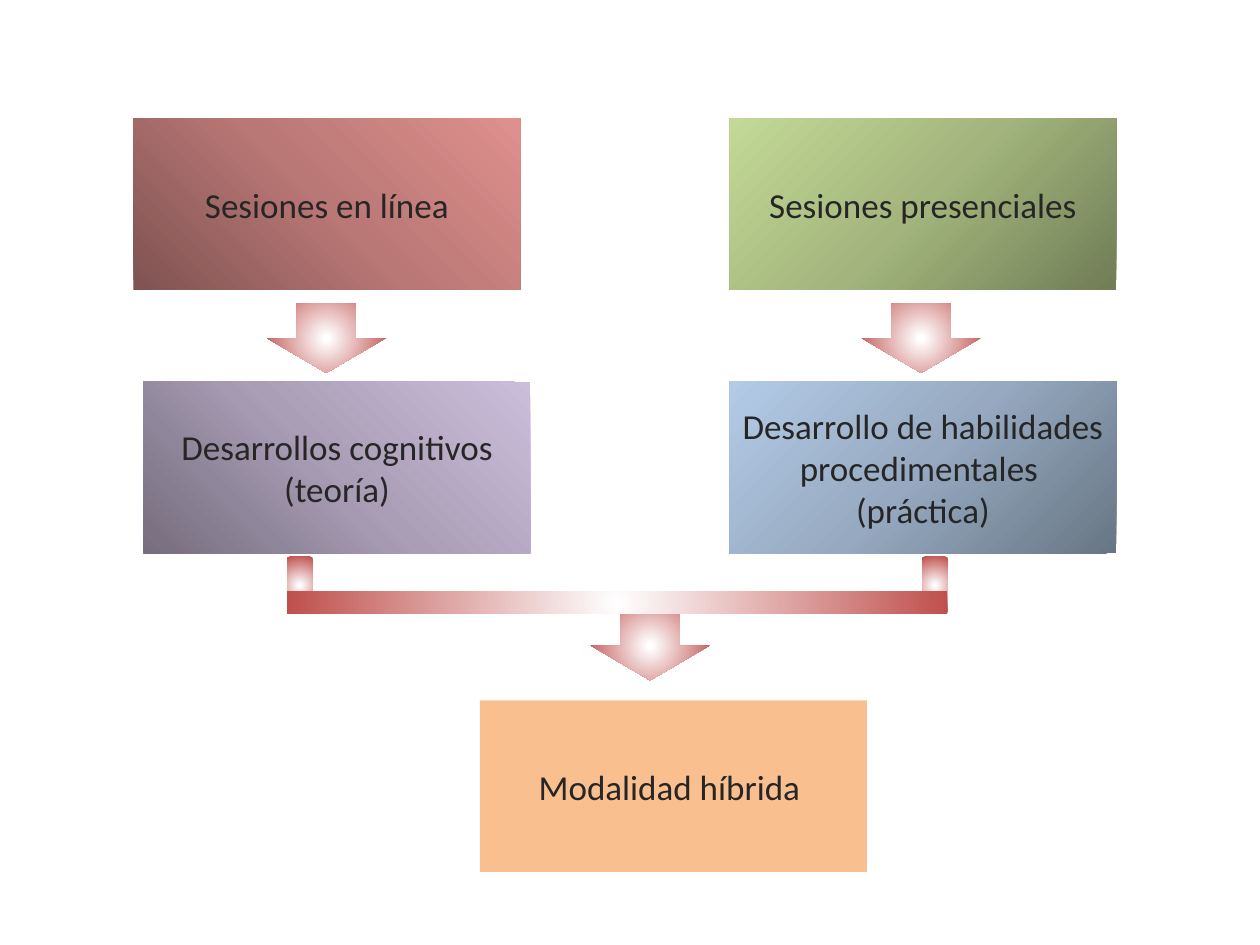
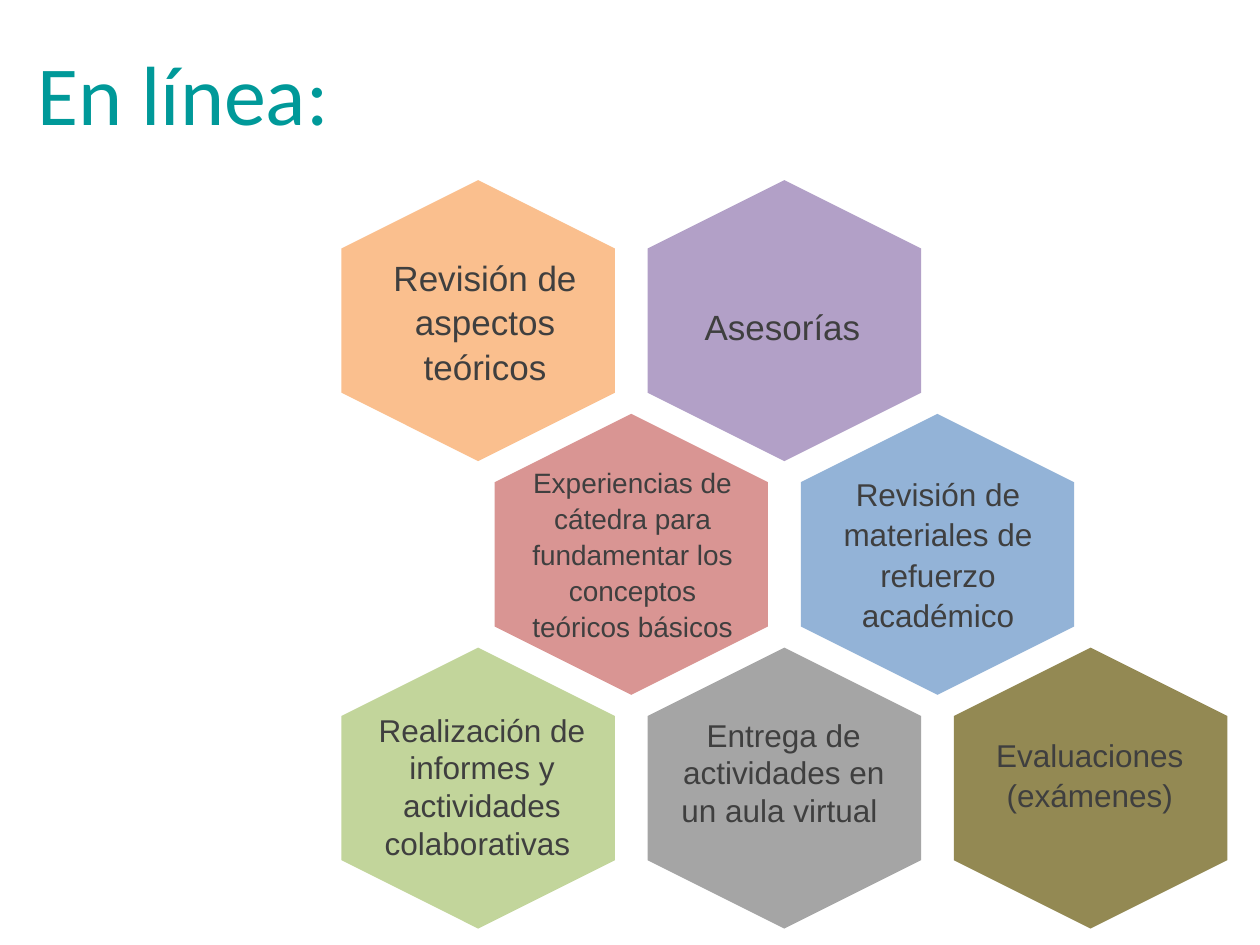
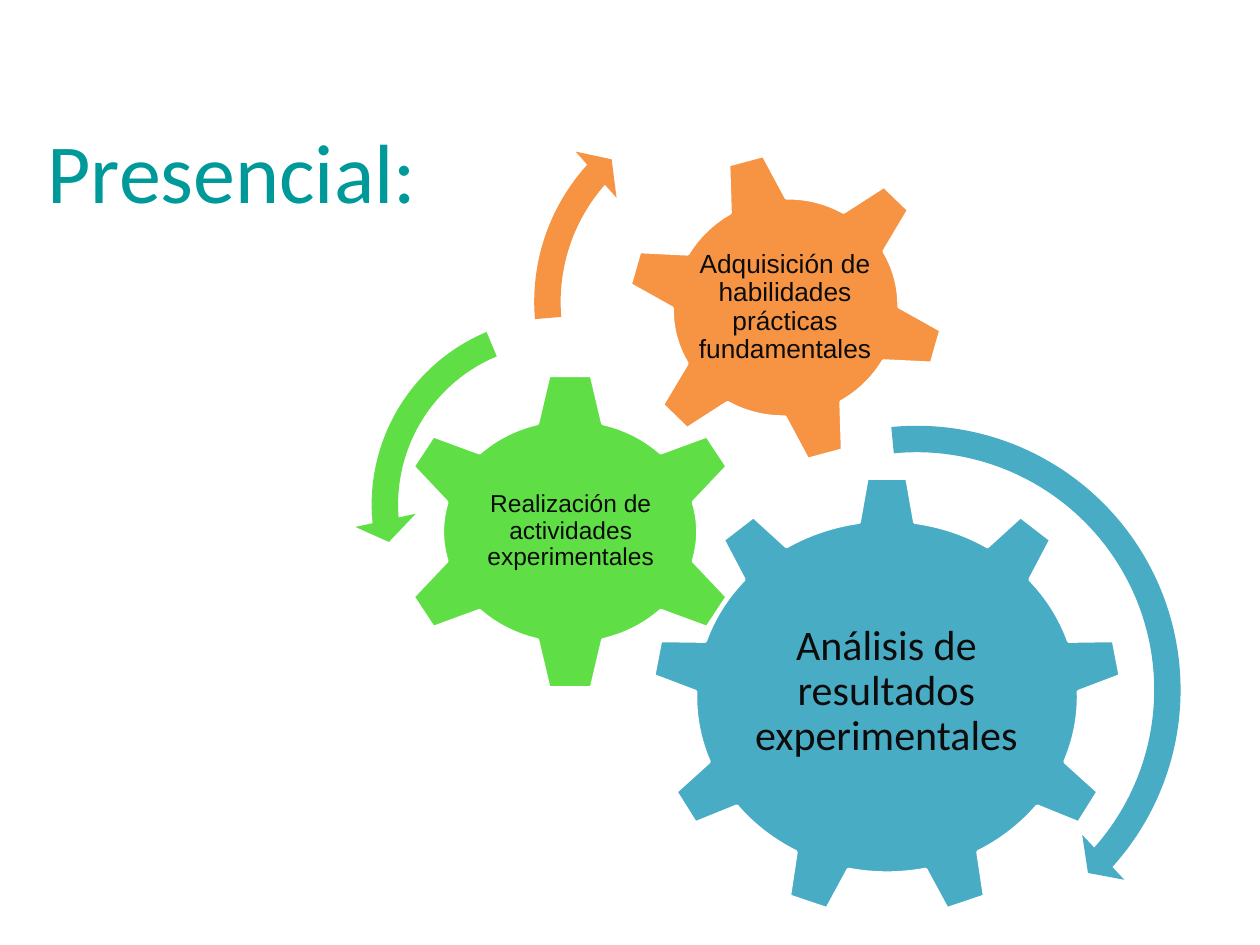
"""Three slides on hybrid learning: the scheme, the online part and the face-to-face part."""
import pptx
import pptx.util
import pptx.dml.color
import pptx.enum.shapes
import pptx.enum.text
import pptx.oxml
import pptx.oxml.ns

RGBColor = pptx.dml.color.RGBColor
SHAPE = pptx.enum.shapes.MSO_SHAPE
ALIGN = pptx.enum.text.PP_ALIGN
ANCHOR = pptx.enum.text.MSO_ANCHOR
GROW = pptx.enum.text.MSO_AUTO_SIZE.SHAPE_TO_FIT_TEXT
Pt = pptx.util.Pt
Inches = pptx.util.Inches

WHITE = RGBColor(0xFF, 0xFF, 0xFF)
TEAL = RGBColor(0x00, 0x99, 0x99)
INK = RGBColor(0x26, 0x26, 0x26)
GREY_INK = RGBColor(0x3F, 0x3F, 0x3F)
GEAR_INK = RGBColor(0x0C, 0x0C, 0x0C)
PEACH = RGBColor(0xFA, 0xBF, 0x8E)
LILAC = RGBColor(0xB2, 0xA0, 0xC7)
ROSE = RGBColor(0xD9, 0x95, 0x93)
SKY = RGBColor(0x93, 0xB3, 0xD7)
SAGE = RGBColor(0xC2, 0xD5, 0x9B)
SILVER = RGBColor(0xA5, 0xA5, 0xA5)
OLIVE = RGBColor(0x93, 0x89, 0x53)
BLUE = RGBColor(0x49, 0xAC, 0xC5)
GREEN = RGBColor(0x5F, 0xDF, 0x45)
ORANGE = RGBColor(0xF6, 0x94, 0x44)
RED = RGBColor(0xBF, 0x50, 0x4D)
RED_RAMP = (RGBColor(0x7F, 0x53, 0x52), RGBColor(0xB9, 0x77, 0x75), RGBColor(0xDE, 0x90, 0x8D))
GREEN_RAMP = (RGBColor(0x70, 0x7D, 0x56), RGBColor(0xA3, 0xB5, 0x7D), RGBColor(0xC3, 0xD9, 0x96))
PURPLE_RAMP = (RGBColor(0x76, 0x6D, 0x7E), RGBColor(0xA9, 0x9E, 0xB6), RGBColor(0xCB, 0xBE, 0xDA))
BLUE_RAMP = (RGBColor(0x67, 0x76, 0x84), RGBColor(0x96, 0xA9, 0xC0), RGBColor(0xB3, 0xCB, 0xE7))

RISING = '<a:lin ang="18900000" scaled="0"/>'
FALLING = '<a:lin ang="13500000" scaled="0"/>'
RADIAL = '<a:path path="circle"><a:fillToRect l="{}" t="{}" r="{}" b="{}"/></a:path>'
CENTRE = RADIAL.format(50000, 50000, 50000, 50000)
CORNER = RADIAL.format(0, 100000, 100000, 0)
GLOW = (((0, WHITE), (4, WHITE), (100, RED)), CENTRE)
BAR_GLOW = (((0, WHITE), (100, RED)), CENTRE)

TITLE = dict(name="Calibri", size=Pt(48))
BOX_FONT = dict(name="Calibri", size=Pt(20))


def add_part(slide, kind, box, fill, rotation=0):
    """Add a borderless shape with a plain colour or a (stops, direction) gradient."""
    part = slide.shapes.add_shape(kind, *map(Inches, box))
    part.shadow.inherit = False
    part.line.fill.background()
    part.rotation = rotation
    part.fill.solid()
    if isinstance(fill, RGBColor):
        part.fill.fore_color.rgb = fill
        return part
    stops, direction = fill
    marks = "".join(f'<a:gs pos="{share * 1000}"><a:srgbClr val="{color}"/></a:gs>' for share, color in stops)
    gradient = pptx.oxml.parse_xml(
        f'<a:gradFill {pptx.oxml.ns.nsdecls("a")} rotWithShape="1"><a:gsLst>{marks}</a:gsLst>{direction}</a:gradFill>')
    properties = part._element.spPr
    properties.replace(properties.find(pptx.oxml.ns.qn("a:solidFill")), gradient)
    return part


def write(holder, text, font, color, align=ALIGN.CENTER, spacing=None, inset=(0.1, 0.05), **frame_format):
    """Write one paragraph per line of text into a shape or text box."""
    frame = holder.text_frame
    frame.word_wrap = True
    frame.margin_left = frame.margin_right = Inches(inset[0])
    frame.margin_top = frame.margin_bottom = Inches(inset[1])
    for name, value in frame_format.items():
        setattr(frame, name, value)
    frame.text = text
    for paragraph in frame.paragraphs:
        paragraph.alignment = align
        paragraph.line_spacing = spacing
        paragraph.font.color.rgb = color
        for name, value in font.items():
            setattr(paragraph.font, name, value)


deck = pptx.Presentation()
deck.slide_width, deck.slide_height = Inches(10), Inches(7.5)
scheme, online, on_site = [deck.slides.add_slide(deck.slide_layouts[6]) for _ in range(3)]

LEFT, RIGHT = 1.06, 5.79
TOP, MIDDLE, BOTTOM = 0.94, 3.03, 5.56
STEP_SIZE = (3.07, 1.36)
steps = [
    ("Sesiones en línea", LEFT, TOP, RED_RAMP, RISING),
    ("Sesiones presenciales", RIGHT, TOP, GREEN_RAMP, FALLING),
    ("Modalidad híbrida ", 3.81, BOTTOM, None, None),
    ("Desarrollos cognitivos\n(teoría)", LEFT + 0.08, MIDDLE, PURPLE_RAMP, CORNER),
    ("Desarrollo de habilidades procedimentales \n(práctica)", RIGHT, MIDDLE, BLUE_RAMP, FALLING),
]
for text, left, top, ramp, direction in steps:
    fill = (tuple(zip((0, 50, 100), ramp)), direction) if ramp else PEACH
    step = add_part(scheme, SHAPE.RECTANGLE, (left, top, *STEP_SIZE), fill)
    write(step, text, BOX_FONT, INK, vertical_anchor=ANCHOR.MIDDLE)

for left, top in ((2.12, 2.41), (6.84, 2.41), (4.69, 4.85)):
    add_part(scheme, SHAPE.DOWN_ARROW, (left, top, 0.94, 0.55), GLOW)
for left in (7.32, 2.28):
    add_part(scheme, SHAPE.RECTANGLE, (left, 4.42, 0.2, 0.45), GLOW)
add_part(scheme, SHAPE.RECTANGLE, (4.81, 2.16, 0.18, 5.24), BAR_GLOW, 270)

CELL_LEFT, CELL_TOP, COLUMN, ROW = 2.68, 1.46, 2.43, 1.855
cells = [
    (0, 0, PEACH, "Revisión de aspectos teóricos", (2.91, 1.96, 1.88, 1.16), 20, 1.07),
    (0, 1, LILAC, "Asesorías", (5.27, 2.35, 1.88, 0.44), 20, 1.07),
    (1, 0.5, ROSE, "Experiencias de cátedra para fundamentar los conceptos teóricos básicos",
     (4.08, 3.63, 1.88, 1.53), 16, 1.07),
    (1, 1.5, SKY, "Revisión de materiales de refuerzo académico", (6.36, 3.7, 2.17, 1.38), 18, 1.07),
    (2, 0, SAGE, "Realización de informes y actividades colaborativas ", (2.89, 5.59, 1.87, 1.31), 18, None),
    (2, 1, SILVER, "Entrega de actividades en un aula virtual ", (5.28, 5.63, 1.88, 1.01), 18, None),
    (2, 2, OLIVE, "Evaluaciones (exámenes)", (7.41, 5.77, 2.48, 0.73), 18, 1.07),
]
for row, column, color, text, label_box, size, spacing in cells:
    cell_box = (CELL_LEFT + column * COLUMN, CELL_TOP + row * ROW, 2.23, 2.17)
    add_part(online, SHAPE.HEXAGON, cell_box, color, 90).adjustments[0] = 0.25
    label = online.shapes.add_textbox(*map(Inches, label_box))
    write(label, text, dict(name="Arial", size=Pt(size)), GREY_INK, spacing=spacing, auto_size=GROW)

gears = [
    (SHAPE.GEAR_9, (5.17, 3.78, 3.74, 3.5), 0, BLUE, "Análisis de resultados experimentales",
     (5.9, 4.59, 2.27, 1.8), "Calibri", 24),
    (SHAPE.GEAR_6, (3.13, 2.95, 2.79, 2.54), 0, GREEN, "Realización de actividades experimentales",
     (3.81, 3.59, 1.44, 1.25), "Arial", 14),
    (SHAPE.GEAR_6, (4.96, 1.2, 2.55, 2.48), 345, ORANGE, "Adquisición de habilidades prácticas fundamentales",
     (5.52, 1.74, 1.42, 1.4), "Arial", 15),
]
for kind, gear_box, rotation, color, text, label_box, font_name, size in gears:
    gear = add_part(on_site, kind, gear_box, color, rotation)
    gear.line.color.rgb = WHITE
    gear.line.width = Pt(2)
    label = on_site.shapes.add_textbox(*map(Inches, label_box))
    write(label, text, dict(name=font_name, size=Pt(size)), GEAR_INK, spacing=0.9, inset=(0.02, 0.02),
          vertical_anchor=ANCHOR.MIDDLE)

DEGREE = 0.6
turns = [
    (SHAPE.CIRCULAR_ARROW, (5.04, 3.24, 4.47), BLUE, 4.69, (5, 41.9, 264.5), 5.47),
    (SHAPE.LEFT_CIRCULAR_ARROW, (2.81, 2.38, 3.25), GREEN, 6.45, (7.2, 174.8, 247.3), 7.53),
    (SHAPE.CIRCULAR_ARROW, (4.1, 0.64, 3.51), ORANGE, 5.98, (6.6, 221.9, 175.1), 6.98),
]
for kind, (left, top, side), color, thickness, angles, head in turns:
    turn = add_part(on_site, kind, (left, top, side, side), color)
    values = (thickness / 100, *(angle * DEGREE for angle in angles), head / 100)
    for index, value in enumerate(values):
        turn.adjustments[index] = value

for slide, text, left, top in ((online, "En línea:", 0.2, 0.28), (on_site, "Presencial:", 0.28, 0.9)):
    heading = slide.shapes.add_textbox(*map(Inches, (left, top, 3.14, 0.91)))
    write(heading, text, TITLE, TEAL, ALIGN.LEFT, auto_size=GROW)

deck.save("out.pptx")
